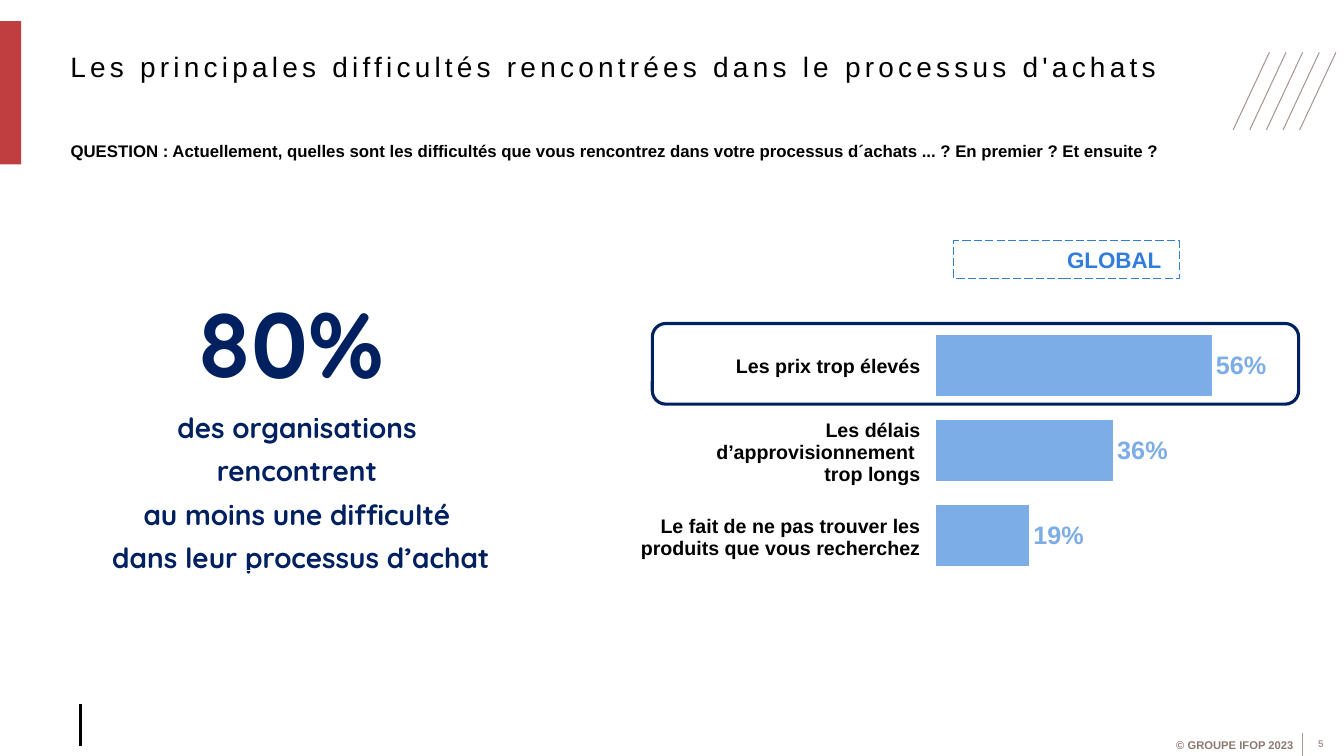
"""Builds the slide on the main difficulties met in the purchasing process."""
from lxml import etree
from pptx import Presentation
from pptx.chart.data import CategoryChartData
from pptx.dml.color import RGBColor
from pptx.enum.chart import XL_CHART_TYPE, XL_LABEL_POSITION
from pptx.enum.dml import MSO_LINE
from pptx.enum.shapes import MSO_CONNECTOR, MSO_SHAPE
from pptx.enum.text import MSO_ANCHOR, PP_ALIGN
from pptx.oxml import parse_xml
from pptx.oxml.ns import qn
from pptx.util import Inches, Pt

LEFT, CENTER, RIGHT = PP_ALIGN.LEFT, PP_ALIGN.CENTER, PP_ALIGN.RIGHT
JUSTIFY = PP_ALIGN.JUSTIFY
MIDDLE = MSO_ANCHOR.MIDDLE
RECTANGLE, ROUNDED = MSO_SHAPE.RECTANGLE, MSO_SHAPE.ROUNDED_RECTANGLE
STRAIGHT = MSO_CONNECTOR.STRAIGHT
BAR_CLUSTERED = XL_CHART_TYPE.BAR_CLUSTERED
OUTSIDE_END = XL_LABEL_POSITION.OUTSIDE_END
LONG_DASH = MSO_LINE.LONG_DASH

BLACK, NAVY, BLUE, LIGHT_BLUE = "000000", "002060", "317DD9", "7DADE7"
RED, TAUPE, GREY = "C13E40", "8B7A6F", "A59891"


def color(code):
    return RGBColor.from_string(code)


def add_span(para, text, size, code, bold=True, name="Arial"):
    span = para.add_run()
    span.text = text
    span.font.size = Pt(size)
    span.font.bold = bold
    span.font.name = name
    span.font.color.rgb = color(code)
    return span


deck = Presentation()
deck.slide_width, deck.slide_height = Inches(13.33), Inches(7.5)
page = deck.slides.add_slide(deck.slide_layouts[6])

band = page.shapes.add_shape(RECTANGLE, 0, Inches(0.21), Inches(0.21), Inches(1.42))
band.shadow.inherit = False
band.fill.solid()
band.fill.fore_color.rgb = color(RED)
band.line.fill.background()

rules = [(12.92, 7.27, 12.92, 7.5, GREY, 0.75), (0.8, 6.98, 0.8, 7.4, BLACK, 2.25)]
for index in range(5):
    top_x = 12.59 + index * 0.165
    rules.append((top_x, 0.52, top_x - 0.36, 1.29, GREY, 0.75))
for x1, y1, x2, y2, code, weight in rules:
    rule = page.shapes.add_connector(STRAIGHT, Inches(x1), Inches(y1), Inches(x2), Inches(y2))
    rule.line.color.rgb = color(code)
    rule.line.width = Pt(weight)
    etree.SubElement(rule.element.spPr, qn("a:effectLst"))

texts = [
    (11.2, 7.27, 1.73, 0.24, "© GROUPE IFOP 2023", 8, TAUPE, True, RIGHT),
    (12.87, 7.26, 0.46, 0.23, "5", 7, GREY, True, CENTER),
    (0.6, 0.2, 11.57, 0.91, "Les principales difficultés rencontrées dans le processus d'achats",
     20, BLACK, False, LEFT),
]
for x, y, width, height, text, size, code, bold, align in texts:
    box = page.shapes.add_textbox(Inches(x), Inches(y), Inches(width), Inches(height))
    box.text_frame.word_wrap = True
    box.text_frame.vertical_anchor = MIDDLE
    para = box.text_frame.paragraphs[0]
    para.alignment = align
    span = add_span(para, text, size, code, bold)
span.font._element.set("spc", "300")

data = CategoryChartData()
data.categories = ["1", "2", "3"]
data.add_series("Series 1", (56, 36, 19))
chart = page.shapes.add_chart(
    BAR_CLUSTERED, Inches(9.28), Inches(3.2), Inches(3.3), Inches(2.67), data).chart
chart.has_legend = False
chart.has_title = False
chart.font.name, chart.font.size = "Arial", Pt(14)
chart.font.color.rgb = color(BLACK)
chart.category_axis.reverse_order = True
chart.value_axis.minimum_scale, chart.value_axis.maximum_scale = 0, 60
chart.value_axis.has_major_gridlines = False
chart.category_axis.visible = chart.value_axis.visible = False
plot = chart.plots[0]
plot.gap_width = 40
plot.vary_by_categories = False
bars = plot.series[0].format.fill
bars.solid()
bars.fore_color.rgb = color(LIGHT_BLUE)
plot.has_data_labels = True
labels = plot.data_labels
labels.show_value = True
labels.position = OUTSIDE_END
labels.number_format, labels.number_format_is_linked = '0"%"', False
labels.font.name, labels.font.size, labels.font.bold = "Arial", Pt(18), True
labels.font.color.rgb = color(LIGHT_BLUE)
plot_area = chart._chartSpace.chart.plotArea
for layout in plot_area.findall(qn("c:layout")):
    plot_area.remove(layout)
plot_area.insert(0, parse_xml(
    '<c:layout xmlns:c="http://schemas.openxmlformats.org/drawingml/2006/chart"><c:manualLayout>'
    '<c:layoutTarget val="inner"/><c:xMode val="edge"/><c:yMode val="edge"/>'
    '<c:x val="0"/><c:y val="0"/><c:w val="0.89"/><c:h val="0.95"/>'
    '</c:manualLayout></c:layout>'))

question = ("QUESTION : Actuellement, quelles sont les difficultés que vous rencontrez "
            "dans votre processus d´achats ... ? En premier ? Et ensuite ? ")
reasons = [
    ["Les prix trop élevés"],
    ["Les délais d’approvisionnement ", "trop longs"],
    ["Le fait de ne pas trouver les produits que vous recherchez"],
]
finding = ["80%", "des organisations ", "rencontrent ", "au moins une difficulté ",
           "dans leur processus d’achat"]
tables = [
    (0.6, 1.35, 11.57, [0.31, 0.24], [[question], []], 12, BLACK, "Arial", JUSTIFY, 0,
     (0.1, 0.05, 0.1, 0.05)),
    (6.16, 3.21, 2.98, [0.85, 0.85, 0.84], reasons, 14, BLACK, "Arial", RIGHT, 0,
     (0.01, 0.01, 0.01, 0)),
    (0.82, 2.79, 4.33, [2.62], [finding], 20, NAVY, "Quicksand", CENTER, 6,
     (0.11, 0.05, 0.11, 0.05)),
]
for x, y, width, heights, rows, size, code, name, align, after, margins in tables:
    table = page.shapes.add_table(len(rows), 1, Inches(x), Inches(y), Inches(width),
                                  Inches(sum(heights))).table
    table.first_row = table.horz_banding = False
    for row, lines in enumerate(rows):
        table.rows[row].height = Inches(heights[row])
        cell = table.cell(row, 0)
        cell.fill.background()
        cell.vertical_anchor = MIDDLE
        cell.margin_left, cell.margin_top, cell.margin_right, cell.margin_bottom = map(Inches, margins)
        for number, text in enumerate(lines):
            para = cell.text_frame.paragraphs[0] if number == 0 else cell.text_frame.add_paragraph()
            para.alignment = align
            para.space_after = Pt(after)
            if text == "80%":
                add_span(para, text, 66, code, name=name)
                add_span(para, " ", 54, code, name=name)
            else:
                add_span(para, text, size, code, name=name)

frames = [
    (RECTANGLE, 9.46, 2.39, 2.24, 0.37, BLUE, 0.75),
    (ROUNDED, 6.47, 3.21, 6.41, 0.8, NAVY, 2.25),
]
for kind, x, y, width, height, code, weight in frames:
    frame = page.shapes.add_shape(kind, Inches(x), Inches(y), Inches(width), Inches(height))
    frame.shadow.inherit = False
    frame.fill.background()
    frame.line.color.rgb = color(code)
    frame.line.width = Pt(weight)
    if kind == RECTANGLE:
        frame.line.dash_style = LONG_DASH
        frame.text_frame.margin_right = Inches(0.18)
        frame.text_frame.vertical_anchor = MIDDLE
        para = frame.text_frame.paragraphs[0]
        para.alignment = RIGHT
        add_span(para, "GLOBAL", 16, BLUE)

deck.save("out.pptx")
